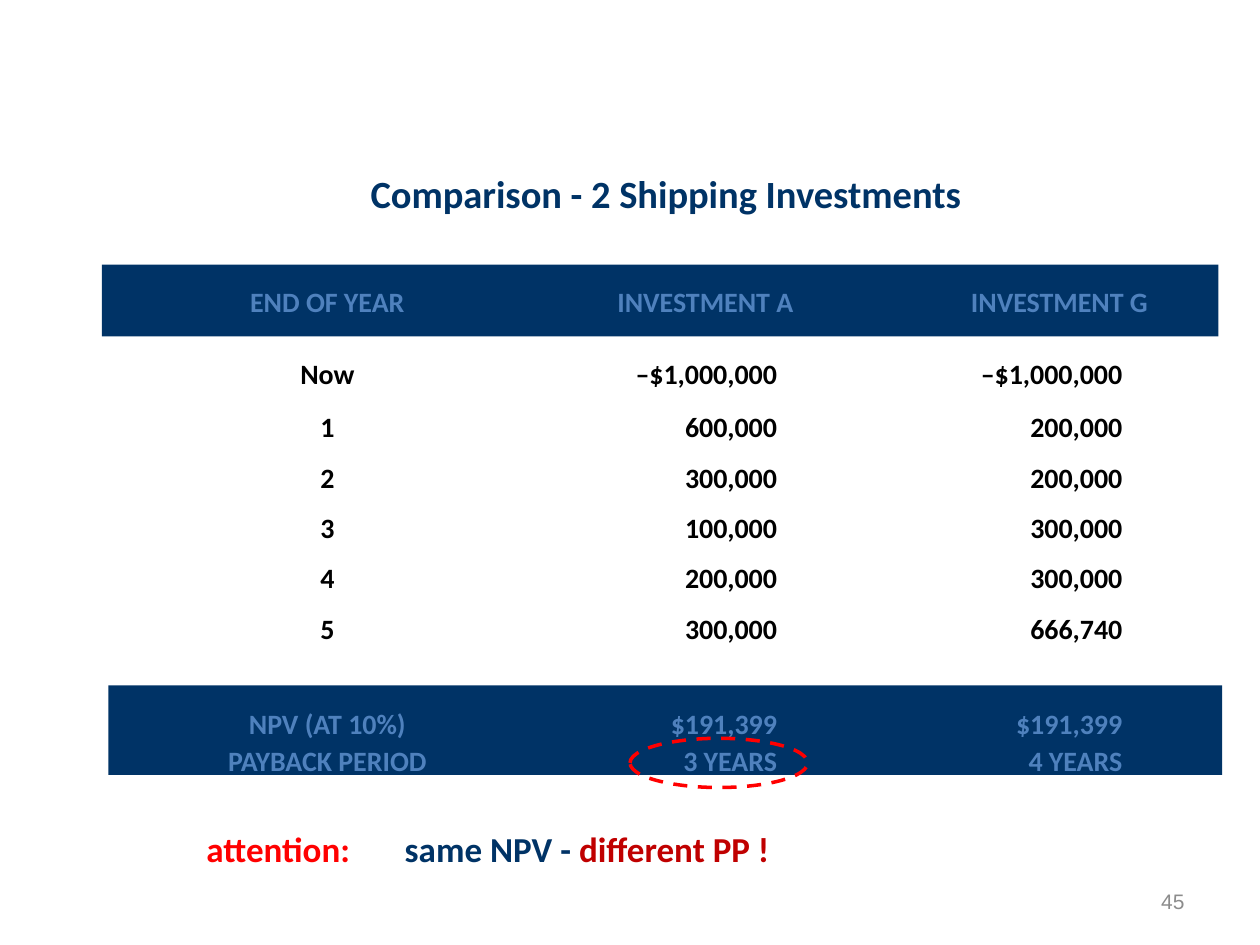
from dataclasses import dataclass

from lxml import etree
from pptx import Presentation
from pptx.dml.color import RGBColor
from pptx.enum.dml import MSO_LINE
from pptx.enum.shapes import MSO_SHAPE
from pptx.enum.text import MSO_ANCHOR, PP_ALIGN
from pptx.oxml.ns import qn
from pptx.util import Pt

RECT, OVAL = MSO_SHAPE.RECTANGLE, MSO_SHAPE.OVAL
TOP, MIDDLE, BOTTOM = MSO_ANCHOR.TOP, MSO_ANCHOR.MIDDLE, MSO_ANCHOR.BOTTOM
LEFT, CENTER, RIGHT = PP_ALIGN.LEFT, PP_ALIGN.CENTER, PP_ALIGN.RIGHT
DASH = MSO_LINE.DASH

NAVY = RGBColor(0x00, 0x33, 0x66)
BLUE = RGBColor(0x4F, 0x81, 0xBD)
BLACK = RGBColor(0x00, 0x00, 0x00)
GRAY = RGBColor(0x8C, 0x8C, 0x8C)
RED = RGBColor(0xFF, 0x00, 0x00)
DARK_RED = RGBColor(0xC0, 0x00, 0x00)


@dataclass(frozen=True)
class Box:
    left: float
    top: float
    width: float
    height: float


@dataclass(frozen=True)
class Piece:
    text: str
    color: RGBColor
    size: float = 16
    font: str = "Calibri"
    bold: bool = True


@dataclass(frozen=True)
class Block:
    box: Box
    lines: list[list[Piece]]
    tabs: tuple[tuple[float, str], ...] = ()
    anchor: MSO_ANCHOR = TOP
    align: PP_ALIGN = LEFT
    space: float = 1.0


HEAD_TABS = ((121.68, "ctr"), (337.68, "ctr"), (540, "ctr"))
DATA_TABS = ((121.68, "ctr"), (378.72, "r"), (576, "r"))
HEAD = Box(58.32, 151.2, 637.92, 41.04)
FOOT = Box(61.92, 391.68, 636.48, 51.12)
RING = Box(360, 421.92, 101.52, 28.08)

TITLES = [("END OF YEAR", "INVESTMENT A", "INVESTMENT G")]
FLOWS = [
    ("Now", "–$1,000,000", "–$1,000,000"),
    ("1", "600,000", "200,000"),
    ("2", "300,000", "200,000"),
    ("3", "100,000", "300,000"),
    ("4", "200,000", "300,000"),
    ("5", "300,000", "666,740"),
]
TOTALS = [
    ("NPV (AT 10%)", "$191,399", "$191,399"),
    ("PAYBACK PERIOD", "3 YEARS", "4 YEARS"),
]


def rows(data: list[tuple[str, ...]], color: RGBColor) -> list[list[Piece]]:
    """Turn rows into tabbed lines, the first led by a taller tab."""
    lead = Piece("\t", BLACK, 24, "DejaVu Sans", False)
    lines = [[Piece("\t" + "\t".join(row), color)] for row in data]
    lines[0] = [lead, Piece("\t".join(data[0]), color)]
    return lines


BLOCKS = [
    Block(Box(59.04, 93.6, 642.96, 33.84),
          [[Piece("Comparison - 2 Shipping Investments", NAVY, 22)]],
          anchor=MIDDLE, align=CENTER),
    Block(Box(516.24, 500.4, 167.76, 28.8),
          [[Piece("45", GRAY, 12, "Arial", False)]],
          anchor=MIDDLE, align=RIGHT),
    Block(HEAD, rows(TITLES, BLUE), HEAD_TABS),
    Block(Box(58.32, 177.84, 637.92, 221.76), rows(FLOWS, BLACK),
          DATA_TABS, space=1.5),
    Block(Box(58.32, 392.4, 637.92, 63.36), rows(TOTALS, BLUE), DATA_TABS),
    Block(Box(110.88, 468.72, 630, 31.68),
          [[Piece("attention:\t", RED, 20), Piece("same NPV - ", NAVY, 20),
            Piece("different PP !", DARK_RED, 20)]],
          ((113.3, "l"),), BOTTOM),
]


def place(box: Box) -> tuple[Pt, Pt, Pt, Pt]:
    """Give the box as lengths."""
    return Pt(box.left), Pt(box.top), Pt(box.width), Pt(box.height)


def draw_bar(slide, box: Box) -> None:
    """Draw a solid navy band."""
    bar = slide.shapes.add_shape(RECT, *place(box))
    bar.shadow.inherit = False
    bar.fill.solid()
    bar.fill.fore_color.rgb = NAVY
    bar.line.fill.background()


def draw_ring(slide, box: Box) -> None:
    """Draw a dashed red ellipse."""
    ring = slide.shapes.add_shape(OVAL, *place(box))
    ring.shadow.inherit = False
    ring.fill.background()
    ring.line.color.rgb = RED
    ring.line.width = Pt(2)
    ring.line.dash_style = DASH


def set_tabs(para, tabs: tuple[tuple[float, str], ...]) -> None:
    """Add tab stops to a paragraph."""
    stops = etree.SubElement(para._p.get_or_add_pPr(), qn("a:tabLst"))
    for pos, align in tabs:
        etree.SubElement(stops, qn("a:tab"), pos=str(Pt(pos)), algn=align)


def draw_text(slide, block: Block) -> None:
    """Draw a block of styled lines."""
    frame = slide.shapes.add_textbox(*place(block.box)).text_frame
    frame.word_wrap = True
    frame.vertical_anchor = block.anchor
    for index, line in enumerate(block.lines):
        para = frame.add_paragraph() if index else frame.paragraphs[0]
        para.alignment = block.align
        para.line_spacing = block.space
        if block.tabs:
            set_tabs(para, block.tabs)
        for piece in line:
            run = para.add_run()
            run.text = piece.text
            run.font.name = piece.font
            run.font.size = Pt(piece.size)
            run.font.bold = piece.bold
            run.font.color.rgb = piece.color


def main() -> None:
    """Build and save the slide."""
    deck = Presentation()
    deck.slide_width, deck.slide_height = Pt(720), Pt(540)
    slide = deck.slides.add_slide(deck.slide_layouts[6])
    for box in (HEAD, FOOT):
        draw_bar(slide, box)
    for block in BLOCKS:
        draw_text(slide, block)
    draw_ring(slide, RING)
    deck.save("out.pptx")


if __name__ == "__main__":
    main()
